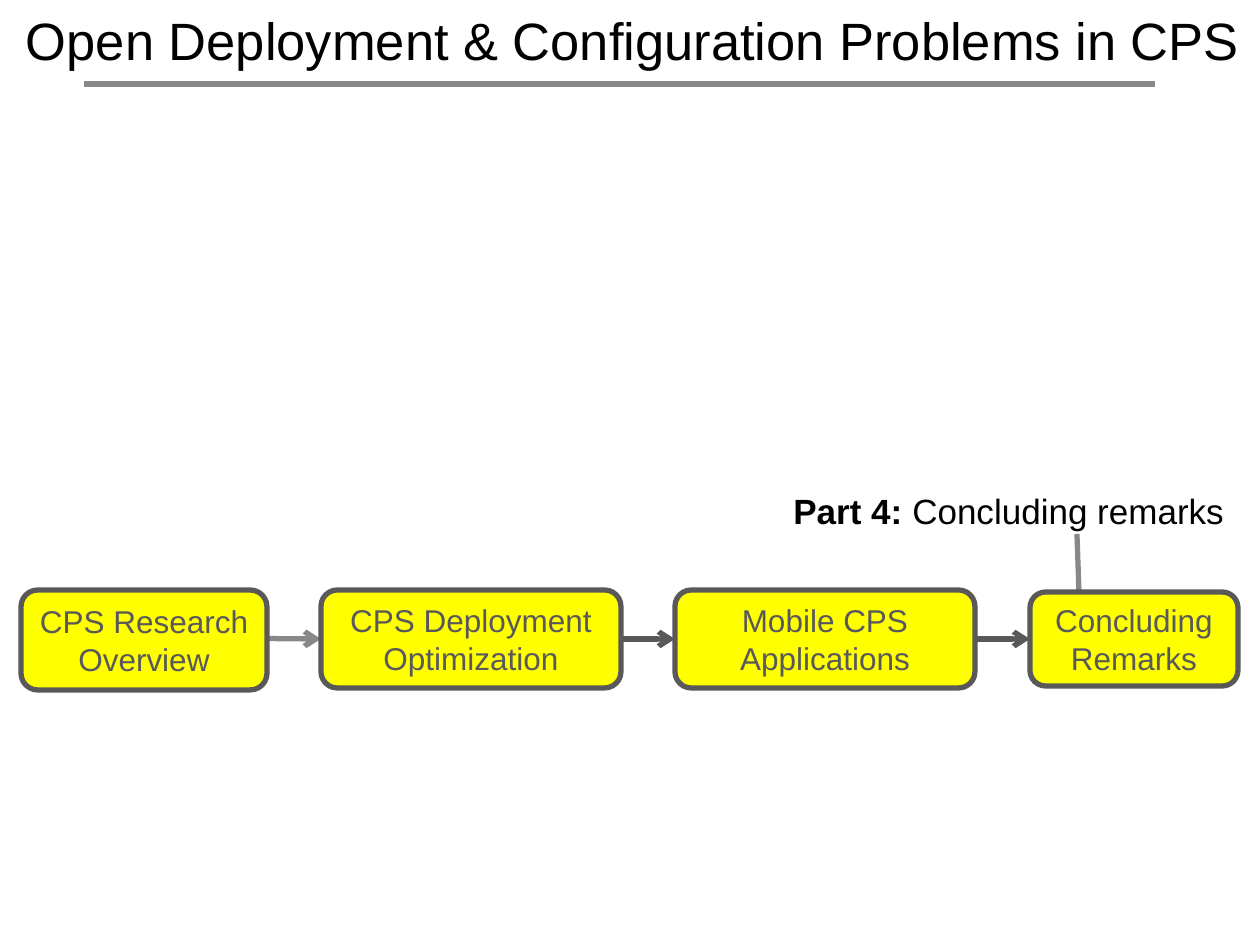
"""Builds the four-part CPS roadmap slide with its closing part called out."""
from lxml import etree
from pptx import Presentation
from pptx import util as u
from pptx.dml.color import RGBColor
from pptx.enum import shapes, text
from pptx.oxml.ns import qn

SCALE = 914400 / 126
COLORS = {"ink": "000000", "rule": "888888", "edge": "595959", "part": "FFFF00"}


def add_run(paragraph, words, size, color, bold=False):
    run = paragraph.add_run()
    run.text = words
    run.font.name = "Arial"
    run.font.size = u.Pt(size)
    run.font.bold = bold
    run.font.color.rgb = RGBColor.from_string(COLORS[color])


def add_line(ends, color, arrow=False):
    line = slide.shapes.add_connector(
        shapes.MSO_CONNECTOR.STRAIGHT, *[round(v * SCALE) for v in ends])
    line.line.color.rgb = RGBColor.from_string(COLORS[color])
    line.line.width = u.Pt(3)
    if arrow:
        etree.SubElement(line.line._get_or_add_ln(), qn("a:tailEnd"), type="arrow")
    etree.SubElement(line._element.spPr, qn("a:effectLst"))


deck = Presentation()
deck.slide_width, deck.slide_height = u.Inches(10), u.Inches(7.5)
slide = deck.slides.add_slide(deck.slide_layouts[5])

heading = slide.shapes.title
heading.left, heading.top, heading.width, heading.height = [
    round(v * SCALE) for v in (8, 1, 1250, 77)]
heading.text_frame.word_wrap = False
heading.text_frame.auto_size = text.MSO_AUTO_SIZE.NONE
heading.text_frame.vertical_anchor = text.MSO_ANCHOR.MIDDLE
heading_line = heading.text_frame.paragraphs[0]
heading_line.alignment = text.PP_ALIGN.CENTER
add_run(heading_line, "Open Deployment & Configuration Problems in CPS", 30, "ink")

add_line((84, 84, 1155, 84), "rule")
add_line((193, 638, 321, 639), "rule", arrow=True)
add_line((621, 639, 675, 639), "edge", arrow=True)
add_line((975, 639, 1030, 639), "edge", arrow=True)
add_line((1077, 534, 1079, 592), "rule")

parts = [
    ("CPS Research Overview", (21, 590, 246, 100)),
    ("CPS Deployment Optimization", (321, 590, 300, 98)),
    ("Mobile CPS Applications", (675, 590, 300, 98)),
    ("Concluding Remarks", (1030, 592, 208, 94)),
]
for label, place in parts:
    part = slide.shapes.add_shape(
        shapes.MSO_SHAPE.ROUNDED_RECTANGLE, *[round(v * SCALE) for v in place])
    part.shadow.inherit = False
    part.fill.solid()
    part.fill.fore_color.rgb = RGBColor.from_string(COLORS["part"])
    part.line.color.rgb = RGBColor.from_string(COLORS["edge"])
    part.line.width = u.Pt(3)
    frame = part.text_frame
    frame.word_wrap = True
    frame.margin_left = frame.margin_right = round(6 * SCALE)
    frame.vertical_anchor = text.MSO_ANCHOR.MIDDLE
    frame.paragraphs[0].alignment = text.PP_ALIGN.CENTER
    add_run(frame.paragraphs[0], label, 18, "edge")

callout = slide.shapes.add_textbox(*[round(v * SCALE) for v in (781, 483, 479, 55)])
callout.text_frame.word_wrap = True
callout_line = callout.text_frame.paragraphs[0]
add_run(callout_line, "Part 4: ", 20, "ink", bold=True)
add_run(callout_line, "Concluding remarks", 20, "ink")

deck.save("out.pptx")
